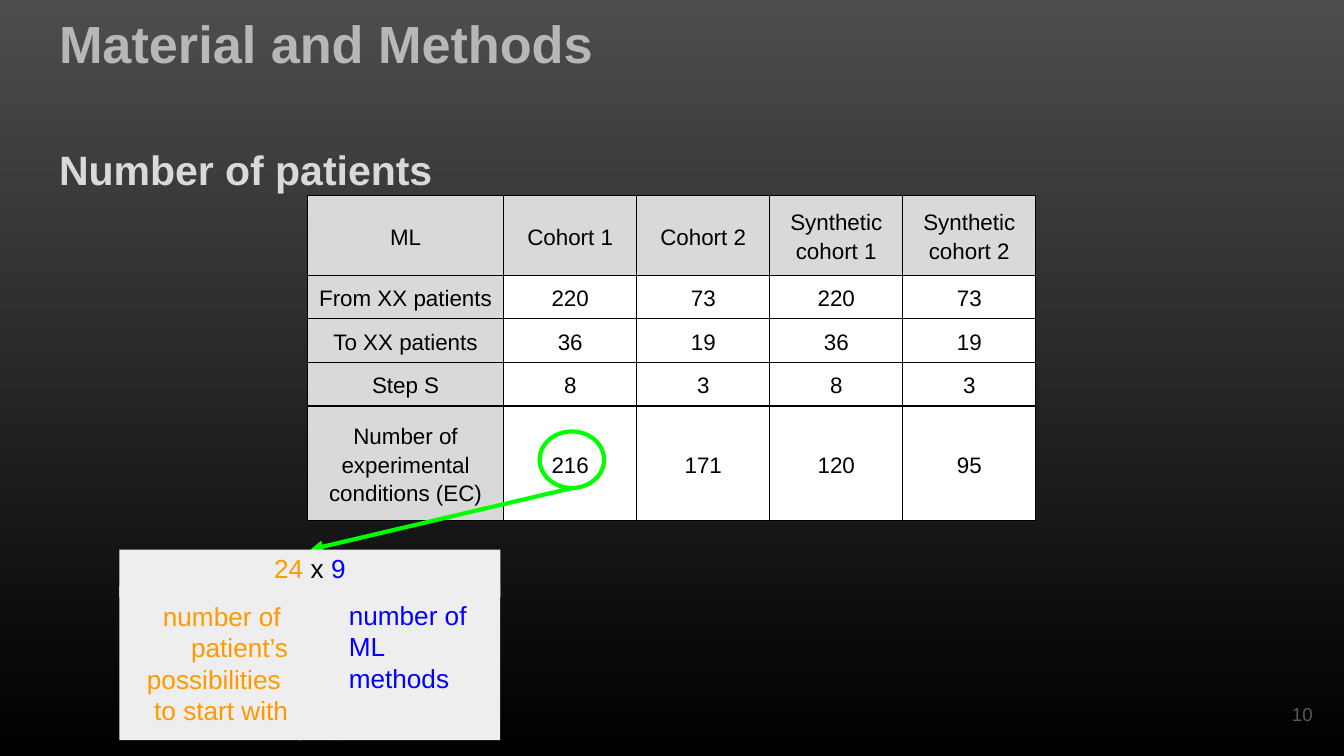
from lxml import etree
from pptx import Presentation, util as u
from pptx.dml.color import RGBColor
from pptx.enum import shapes, text
from pptx.oxml import ns

WIDE = u.Inches(10)
HIGH = WIDE * 9 // 16
BLACK = RGBColor(0, 0, 0)
WHITE = RGBColor(255, 255, 255)
DARK = RGBColor(0x4D, 0x4D, 0x4D)
DIM = RGBColor(0x59, 0x59, 0x59)
GREY = RGBColor(0xB7, 0xB7, 0xB7)
PALE = RGBColor(0xD9, 0xD9, 0xD9)
MIST = RGBColor(0xEE, 0xEE, 0xEE)
GREEN = RGBColor(0, 255, 0)
AMBER = RGBColor(0xFF, 0x99, 0)
BLUE = RGBColor(0, 0, 255)
LEFT, MID, RIGHT = text.PP_ALIGN.LEFT, text.PP_ALIGN.CENTER, text.PP_ALIGN.RIGHT
TOP, CORE, BASE = (text.MSO_ANCHOR.TOP, text.MSO_ANCHOR.MIDDLE,
                   text.MSO_ANCHOR.BOTTOM)

ROWS = [
    ("ML", "Cohort 1", "Cohort 2", "Synthetic cohort 1", "Synthetic cohort 2"),
    ("From XX patients", "220", "73", "220", "73"),
    ("To XX patients", "36", "19", "36", "19"),
    ("Step S", "8", "3", "8", "3"),
    ("Number of experimental conditions (EC)", "216", "171", "120", "95"),
]
COLS = [14.6] + [9.9] * 4
TALL = [10.5] + [5.77] * 3 + [15.2]


def col(n):
    """Width of n columns on a grid of 100."""
    return round(WIDE * n / 100)


def row(n):
    """Height of n rows on a grid of 100."""
    return round(HIGH * n / 100)


def area(x, y, w, h):
    return col(x), row(y), col(w), row(h)


def write(frame, *lines, size=14, color=BLACK, bold=False, align=LEFT,
          space=None):
    """Fill a frame; a line is a string or a list of (string, colour) runs."""
    for i, line in enumerate(lines):
        para = frame.add_paragraph() if i else frame.paragraphs[0]
        para.alignment = align
        if space:
            para.line_spacing = space
        for words, tint in [(line, color)] if isinstance(line, str) else line:
            run = para.add_run()
            run.text = words
            font = run.font
            font.name, font.size, font.bold = "Arial", u.Pt(size), bold
            font.color.rgb = tint


def fit(frame, anchor):
    """Wrap the text and set even margins."""
    frame.word_wrap = True
    frame.vertical_anchor = anchor
    frame.margin_left = frame.margin_right = u.Inches(0.1)
    frame.margin_top = frame.margin_bottom = u.Inches(0.1)


def label(slide, spot, words, anchor=TOP, **style):
    frame = slide.shapes.add_textbox(*area(*spot)).text_frame
    fit(frame, anchor)
    write(frame, words, **style)


def edge(cell):
    """Draw a thin black line on each side of a cell."""
    props = cell._tc.get_or_add_tcPr()
    for side in "LRTB":
        line = etree.SubElement(props, ns.qn(f"a:ln{side}"), w=str(u.Pt(0.75)))
        fill = etree.SubElement(line, ns.qn("a:solidFill"))
        etree.SubElement(fill, ns.qn("a:srgbClr"), val=str(BLACK))


def grid(slide, x, y):
    spot = area(x, y, sum(COLS), sum(TALL))
    table = slide.shapes.add_table(len(ROWS), len(COLS), *spot).table
    for part, n in zip(table.columns, COLS):
        part.width = col(n)
    for part, n in zip(table.rows, TALL):
        part.height = row(n)
    for r, line in enumerate(ROWS):
        for c, words in enumerate(line):
            cell = table.cell(r, c)
            write(cell.text_frame, words, size=12, align=MID, space=1.15)
            cell.vertical_anchor = CORE
            cell.margin_left = cell.margin_right = u.Inches(0.03)
            cell.margin_top = cell.margin_bottom = u.Inches(0.02)
            edge(cell)
            cell.fill.solid()
            cell.fill.fore_color.rgb = WHITE if r and c else PALE


def panel(group, spot, *lines, anchor=TOP, **style):
    box = group.shapes.add_shape(shapes.MSO_SHAPE.RECTANGLE, *area(*spot))
    box.shadow.inherit = False
    box.fill.solid()
    box.fill.fore_color.rgb = MIST
    box.line.fill.background()
    if lines:
        fit(box.text_frame, anchor)
        write(box.text_frame, *lines, **style)


def ink(line):
    line.color.rgb = GREEN
    line.width = u.Pt(2.25)


def ring(slide, spot):
    oval = slide.shapes.add_shape(shapes.MSO_SHAPE.OVAL, *area(*spot))
    oval.shadow.inherit = False
    oval.fill.background()
    ink(oval.line)


def arrow(slide, x1, y1, x2, y2):
    link = slide.shapes.add_connector(shapes.MSO_CONNECTOR.STRAIGHT,
                                      col(x1), row(y1), col(x2), row(y2))
    ink(link.line)
    etree.SubElement(link.line._get_or_add_ln(), ns.qn("a:tailEnd"),
                     type="triangle")
    etree.SubElement(link._element.spPr, ns.qn("a:effectLst"))


def shade(slide):
    fill = slide.background.fill
    fill.gradient()
    fill.gradient_angle = 270
    for stop, tint in zip(fill.gradient_stops, (DARK, BLACK)):
        stop.color.rgb = tint


def main():
    deck = Presentation()
    deck.slide_width, deck.slide_height = WIDE, HIGH
    slide = deck.slides.add_slide(deck.slide_layouts[6])
    shade(slide)
    label(slide, (3.41, -0.25, 93.2, 11.2), "Material and Methods",
          size=28, color=GREY, bold=True)
    label(slide, (3.41, 14.04, 93.2, 87.5), "Number of patients",
          size=22, color=PALE, bold=True, space=1.5)
    label(slide, (92.65, 90.67, 6, 7.65), "10", anchor=CORE,
          size=10, color=DIM, align=RIGHT)
    grid(slide, 22.88, 25.9)
    arrow(slide, 42.6, 64.55, 23.1, 72.7)
    ring(slide, (40.15, 57.07, 4.8, 7.48))

    note = slide.shapes.add_group_shape()
    panel(note, (8.88, 72.7, 28.35, 6.25),
          [("24", AMBER), (" x ", BLACK), ("9", BLUE)],
          anchor=BASE, align=MID)
    panel(note, (8.88, 77.5, 13.55, 20.4), "number of ",
          "patient’s possibilities ", "to start with",
          anchor=CORE, color=AMBER, align=RIGHT)
    panel(note, (24.97, 77.5, 12.26, 20.4), "number of", "ML methods",
          color=BLUE)
    panel(note, (22.2, 78.7, 2.9, 19.2))
    deck.save("out.pptx")


if __name__ == "__main__":
    main()
